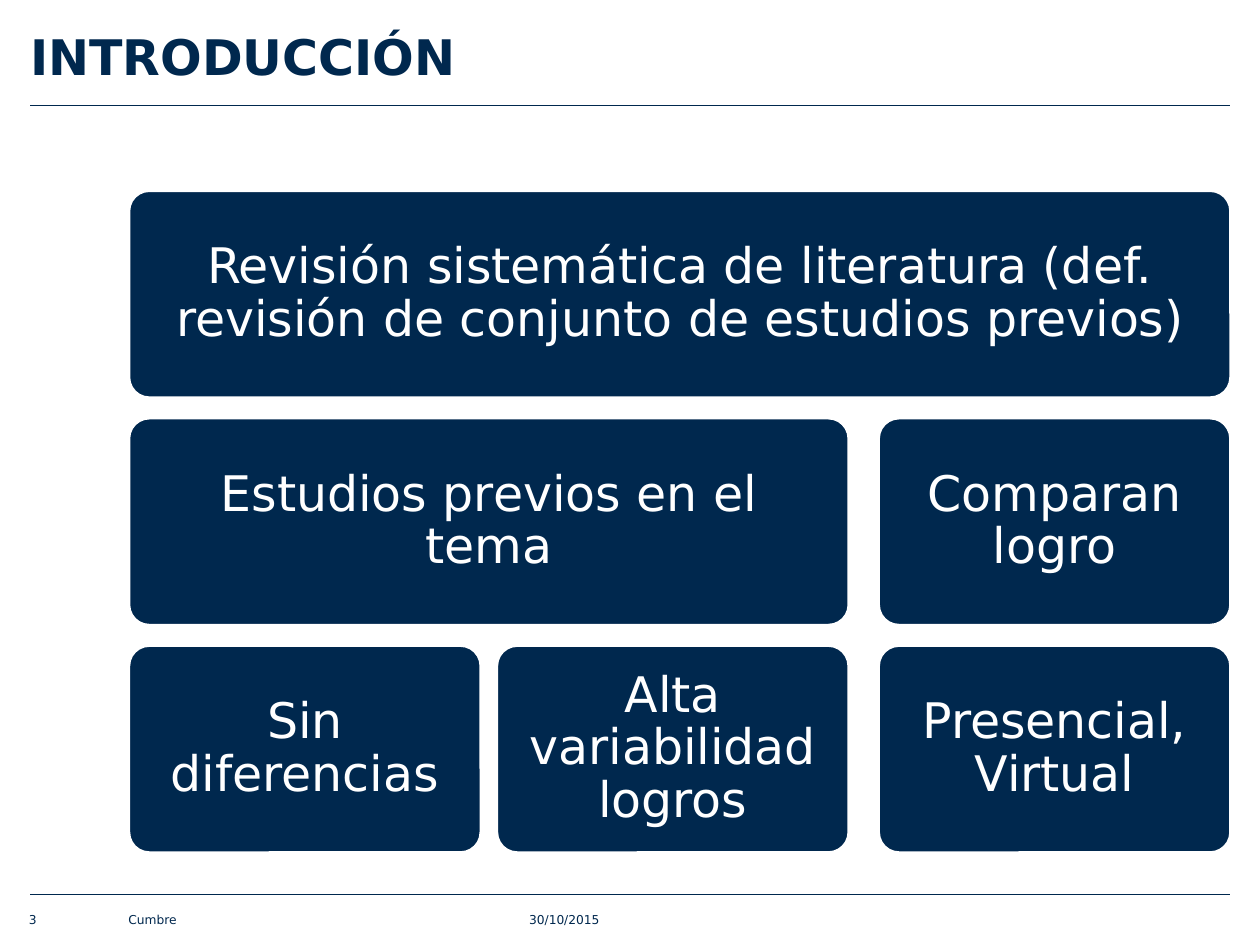
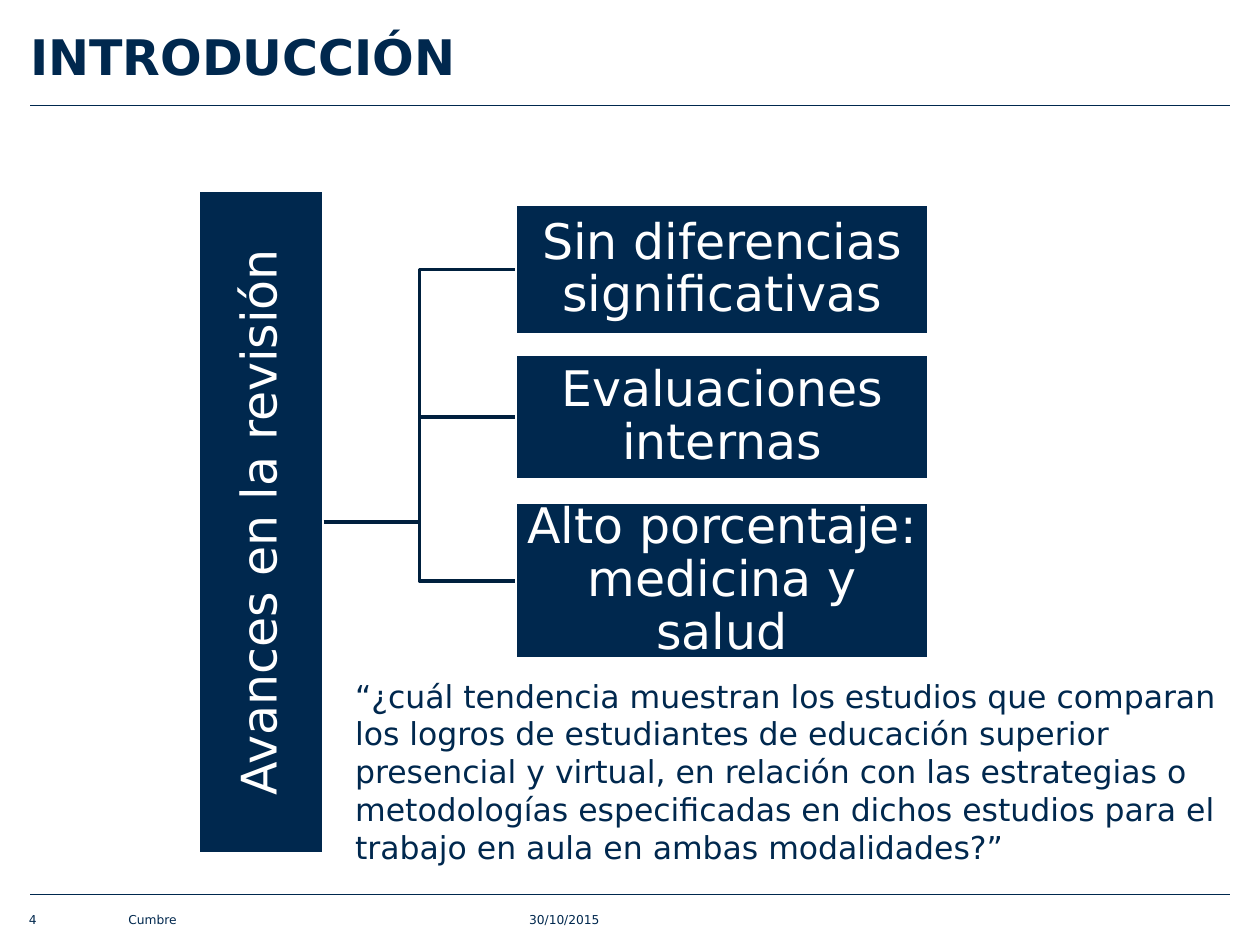
"""Build the two introduction slides on the literature review."""
import pptx
import pptx.util
import pptx.dml.color
import pptx.enum.shapes
import pptx.enum.text
import pptx.oxml.ns
import lxml.etree

SHAPES = pptx.enum.shapes.MSO_SHAPE
CONNECTORS = pptx.enum.shapes.MSO_CONNECTOR
ALIGN = pptx.enum.text.PP_ALIGN
ANCHOR = pptx.enum.text.MSO_ANCHOR
AUTOSIZE = pptx.enum.text.MSO_AUTO_SIZE
inches = pptx.util.Inches

WIDTH, HEIGHT = 10, 7.5
MARGIN = 0.24
FONT = "DejaVu Sans"
NAVY, BRANCH_NAVY, WHITE = "00284E", "00203E", "FFFFFF"

TITLE = "INTRODUCCIÓN"
RULE_TOPS = (0.84, 7.1)
FIRST_PAGE = 3
FOOTER = [("30/10/2015", 4.2, 2.33), ("Cumbre", 1.02, 3.07)]
PAGE_NUMBER_PLACE = (0.23, 0.59)

TILES = [
    ("Revisión sistemática de literatura (def. revisión de conjunto de estudios previos)", 0, 0, 2),
    ("Estudios previos en el tema", 1, 0, 1),
    ("Sin diferencias", 2, 0, 0),
    ("Alta variabilidad logros", 2, 1, 1),
    ("Comparan logro", 1, 2, 2),
    ("Presencial, Virtual", 2, 2, 2),
]
COLUMN_LEFTS, COLUMN_WIDTH = (1.02, 3.94, 6.97), 2.8
FIRST_ROW, ROW_STEP, ROW_HEIGHT = 1.51, 1.805, 1.65

TRUNK = ("Avances en la revisión", 1.57, 1.51, 1, 5.27)
FINDINGS = [
    ("Sin diferencias significativas", 1.62, 1.04),
    ("Evaluaciones internas", 2.81, 1),
    ("Alto porcentaje: medicina y salud", 3.99, 1.24),
]
FINDING_LEFT, FINDING_WIDTH = 4.09, 3.28
QUESTION = (
    "“¿cuál tendencia muestran los estudios que comparan los logros de estudiantes "
    "de educación superior presencial y virtual, en relación con las estrategias o "
    "metodologías especificadas en dichos estudios para el trabajo en aula en ambas "
    "modalidades?”"
)


def rgb(value):
    return pptx.dml.color.RGBColor.from_string(value)


def write(holder, text, size=28, color=NAVY, bold=False, align=ALIGN.LEFT,
          anchor=ANCHOR.MIDDLE, inset=(0, 0), spacing=1.0, autosize=AUTOSIZE.NONE):
    frame = holder.text_frame
    frame.word_wrap = True
    frame.auto_size = autosize
    frame.vertical_anchor = anchor
    frame.margin_left = frame.margin_right = inches(inset[0])
    frame.margin_top = frame.margin_bottom = inches(inset[1])
    paragraph = frame.paragraphs[0]
    paragraph.alignment = align
    paragraph.line_spacing = spacing
    run = paragraph.add_run()
    run.text = text
    run.font.name = FONT
    run.font.size = pptx.util.Pt(size)
    run.font.bold = bold
    run.font.color.rgb = rgb(color)


def add_label(slide, text, left, top, width, height, **style):
    label = slide.shapes.add_textbox(*map(inches, (left, top, width, height)))
    write(label, text, **style)


def add_block(slide, text, left, top, width, height, outline=SHAPES.RECTANGLE, inset=0.02):
    block = slide.shapes.add_shape(outline, *map(inches, (left, top, width, height)))
    block.shadow.inherit = False
    block.fill.solid()
    block.fill.fore_color.rgb = rgb(NAVY)
    block.line.color.rgb = rgb(WHITE)
    block.line.width = pptx.util.Pt(2)
    write(block, text, color=WHITE, align=ALIGN.CENTER, inset=(inset, inset), spacing=0.9)
    return block


def add_line(slide, start, end, kind=CONNECTORS.STRAIGHT, color=NAVY, weight=0.5):
    line = slide.shapes.add_connector(kind, *map(inches, (*start, *end)))
    line.line.color.rgb = rgb(color)
    line.line.width = pptx.util.Pt(weight)
    properties = line._element.find(pptx.oxml.ns.qn("p:spPr"))
    lxml.etree.SubElement(properties, pptx.oxml.ns.qn("a:effectLst"))
    return line


def add_framed_slide(deck, page):
    slide = deck.slides.add_slide(deck.slide_layouts[5])
    title = slide.shapes.title
    title.left, title.top, title.width, title.height = map(
        inches, (MARGIN, 0.17, WIDTH - 2 * MARGIN, 0.55))
    write(title, TITLE, bold=True)
    for top in RULE_TOPS:
        add_line(slide, (MARGIN, top), (WIDTH - MARGIN, top))
    for text, left, width in FOOTER + [(str(page), *PAGE_NUMBER_PLACE)]:
        add_label(slide, text, left, 7.18, width, 0.18, size=7, anchor=ANCHOR.BOTTOM)
    return slide


def add_review_tiles(slide):
    for text, row, first, last in TILES:
        left = COLUMN_LEFTS[first]
        width = COLUMN_LEFTS[last] + COLUMN_WIDTH - left
        tile = add_block(slide, text, left, FIRST_ROW + row * ROW_STEP, width, ROW_HEIGHT,
                         outline=SHAPES.ROUNDED_RECTANGLE, inset=0.12)
        tile.adjustments[0] = 0.1


def add_findings_tree(slide):
    trunk = add_block(slide, *TRUNK)
    trunk.text_frame._txBody.bodyPr.set("vert", "vert270")
    _, left, top, width, height = TRUNK
    trunk_end = (left + width, top + height / 2)
    for text, top, height in FINDINGS:
        finding = add_block(slide, text, FINDING_LEFT, top, FINDING_WIDTH, height)
        branch = add_line(slide, trunk_end, (FINDING_LEFT, top + height / 2),
                          kind=CONNECTORS.ELBOW, color=BRANCH_NAVY, weight=2)
        branch.begin_connect(trunk, 3)
        branch.end_connect(finding, 1)
    add_label(slide, QUESTION, 2.72, 5.32, 7.05, 1.92, size=18, anchor=ANCHOR.TOP,
              inset=(0.1, 0.05), autosize=AUTOSIZE.SHAPE_TO_FIT_TEXT)


def main():
    deck = pptx.Presentation()
    deck.slide_width, deck.slide_height = inches(WIDTH), inches(HEIGHT)
    for page, add_content in enumerate((add_review_tiles, add_findings_tree), FIRST_PAGE):
        add_content(add_framed_slide(deck, page))
    deck.save("out.pptx")


if __name__ == "__main__":
    main()
